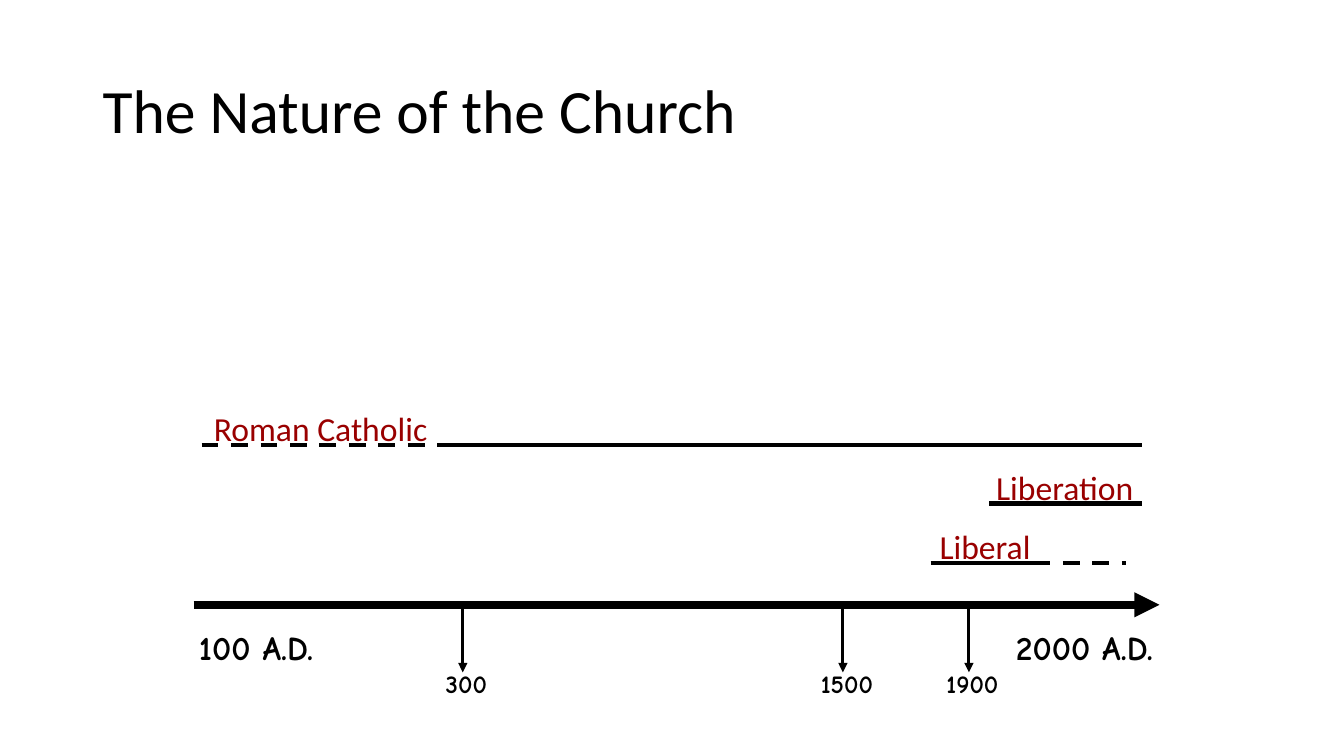
from lxml.etree import SubElement
from pptx import Presentation
from pptx.dml.color import RGBColor
from pptx.enum.dml import MSO_LINE
from pptx.enum.shapes import MSO_CONNECTOR
from pptx.enum.text import MSO_ANCHOR, PP_ALIGN
from pptx.oxml.ns import qn
from pptx.util import Inches, Pt

BLACK = RGBColor(0x00, 0x00, 0x00)
WHITE = RGBColor(0xFF, 0xFF, 0xFF)
RED = RGBColor(0x99, 0x00, 0x00)
BODY_FONT = "Calibri"
DATE_FONT = "Comic Neue"

TITLE = "The Nature of the Church"
ERAS = [("2000 A.D.", 9.92, 1.67), ("100 A.D.", 1.75, 1.58)]
YEARS = [("300", 4.59, 4.32, 0.61), ("1500", 8.36, 8.03, 0.74), ("1900", 9.61, 9.28, 0.73)]
MOVEMENTS = [
    ("Liberal", 8.42, 5.17, [(10.25, 11.17, True), (9.23, 10.25, False)]),
    ("Liberation", 9.21, 4.58, [(9.81, 11.33, False)]),
    ("Roman Catholic", 1.83, 4.0, [(2.0, 4.58, True), (4.48, 11.33, False)]),
]
AXIS_LEFT, AXIS_RIGHT, AXIS_TOP = 1.92, 11.5, 6.0
TICK_LENGTH = 0.67
ERA_TOP, YEAR_TOP = 6.17, 6.58
LABEL_WIDTH, LABEL_HEIGHT, YEAR_HEIGHT = 2.7, 0.5, 0.4
UNDERLINE_DROP = 0.415

presentation = Presentation()
presentation.slide_width = Inches(13.33)
presentation.slide_height = Inches(7.5)
slide = presentation.slides.add_slide(presentation.slide_layouts[6])


def add_label(text, left, top, width, height, size, font, color=BLACK,
              bold=False, align=PP_ALIGN.CENTER, wrap=True):
    shape = slide.shapes.add_textbox(*map(Inches, (left, top, width, height)))
    shape.text_frame.word_wrap = wrap
    paragraph = shape.text_frame.paragraphs[0]
    paragraph.text = text
    paragraph.alignment = align
    paragraph.font.size = Pt(size)
    paragraph.font.name = font
    paragraph.font.bold = bold
    paragraph.font.color.rgb = color
    return shape


def add_line(left, top, right, bottom, width, dashed=False, arrow=False):
    connector = slide.shapes.add_connector(
        MSO_CONNECTOR.STRAIGHT, *map(Inches, (left, top, right, bottom)))
    connector.line.color.rgb = BLACK
    connector.line.width = Pt(width)
    if dashed:
        connector.line.dash_style = MSO_LINE.DASH
    if arrow:
        SubElement(connector.line._get_or_add_ln(), qn("a:tailEnd"), type="triangle")
    SubElement(connector._element.spPr, qn("a:effectLst"))


title = add_label(TITLE, 0.92, 0.4, 11.5, 1.45, 44, BODY_FONT, align=PP_ALIGN.LEFT)
title.text_frame.vertical_anchor = MSO_ANCHOR.MIDDLE
title.text_frame.paragraphs[0].line_spacing = 0.9

for era, left, width in ERAS:
    add_label(era, left, ERA_TOP, width, LABEL_HEIGHT, 24, DATE_FONT, bold=True)

for year, tick, left, width in YEARS:
    label = add_label(year, left, YEAR_TOP, width, YEAR_HEIGHT, 18, DATE_FONT,
                      bold=True, wrap=False)
    label.line.color.rgb = WHITE
    label.line.width = Pt(0.75)
    add_line(tick, AXIS_TOP, tick, AXIS_TOP + TICK_LENGTH, 2.25, arrow=True)

add_line(AXIS_LEFT, AXIS_TOP, AXIS_RIGHT, AXIS_TOP, 6, arrow=True)

for movement, left, top, spans in MOVEMENTS:
    add_label(movement, left, top, LABEL_WIDTH, LABEL_HEIGHT, 24, BODY_FONT, RED)
    for start, end, dashed in spans:
        add_line(start, top + UNDERLINE_DROP, end, top + UNDERLINE_DROP, 3, dashed)

presentation.save("out.pptx")
